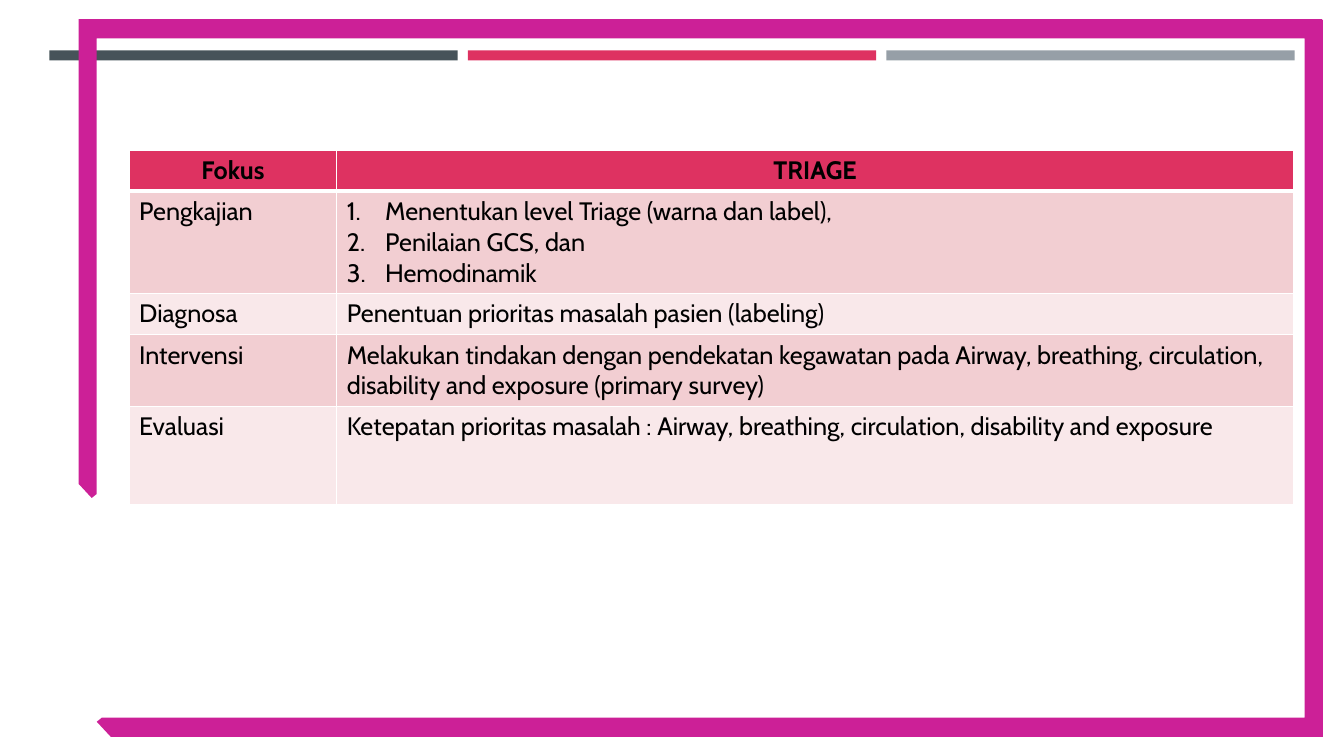
from lxml.etree import SubElement
from pptx import Presentation
from pptx.dml.color import RGBColor
from pptx.enum.shapes import MSO_SHAPE
from pptx.enum.text import PP_ALIGN
from pptx.oxml.ns import qn
from pptx.util import Inches, Pt


def color(value):
    return RGBColor.from_string(value)


class SlideBuilder:
    font_name = "Cabin"
    font_size = 18
    text_color = "000000"
    border_color = "FFFFFF"
    header_fill = "DE3261"
    band_fills = ("F2CED2", "F9E8EA")

    def __init__(self, presentation):
        self.slide = presentation.slides.add_slide(presentation.slide_layouts[6])

    def paint(self, shape, fill):
        shape.shadow.inherit = False
        shape.fill.solid()
        shape.fill.fore_color.rgb = color(fill)
        shape.line.fill.background()

    def bar(self, left, top, width, height, fill):
        shape = self.slide.shapes.add_shape(
            MSO_SHAPE.RECTANGLE, Inches(left), Inches(top), Inches(width), Inches(height))
        self.paint(shape, fill)

    def outline(self, points, fill):
        start, *others = [(Inches(x), Inches(y)) for x, y in points]
        builder = self.slide.shapes.build_freeform(*start)
        builder.add_line_segments(others, close=True)
        self.paint(builder.convert_to_shape(), fill)

    def borders(self, cell, bottom_width):
        properties = cell._tc.get_or_add_tcPr()
        for side, width in (("L", 1), ("R", 1), ("T", 1), ("B", bottom_width)):
            line = SubElement(properties, qn(f"a:ln{side}"), w=str(Pt(width)))
            fill = SubElement(line, qn("a:solidFill"))
            SubElement(fill, qn("a:srgbClr"), val=self.border_color)

    def number(self, paragraph):
        properties = paragraph._p.get_or_add_pPr()
        properties.set("marL", str(Inches(0.38)))
        properties.set("indent", str(-Inches(0.38)))
        SubElement(properties, qn("a:buFont"), typeface="+mj-lt")
        SubElement(properties, qn("a:buAutoNum"), type="arabicPeriod")

    def cell(self, cell, text, fill, header):
        self.borders(cell, 3 if header else 1)
        cell.fill.solid()
        cell.fill.fore_color.rgb = color(fill)
        cell.text_frame.text = text
        paragraphs = cell.text_frame.paragraphs
        for paragraph in paragraphs:
            paragraph.alignment = PP_ALIGN.CENTER if header else PP_ALIGN.LEFT
            if len(paragraphs) > 1:
                self.number(paragraph)
            for run in paragraph.runs:
                run.font.name = self.font_name
                run.font.size = Pt(self.font_size)
                run.font.bold = header
                run.font.color.rgb = color(self.text_color)

    def table(self, left, top, widths, heights, rows):
        table = self.slide.shapes.add_table(
            len(rows), len(widths), Inches(left), Inches(top),
            Inches(sum(widths)), Inches(sum(heights))).table
        for column, width in zip(table.columns, widths):
            column.width = Inches(width)
        for index, (row, height, texts) in enumerate(zip(table.rows, heights, rows)):
            row.height = Inches(height)
            header = index == 0
            fill = self.header_fill if header else self.band_fills[(index - 1) % 2]
            for cell, text in zip(row.cells, texts):
                self.cell(cell, text, fill, header)


BAR_FILLS = ("465359", "DE3261", "969FA7")
FRAME_POINTS = (
    (0.78, 0.19), (13.11, 0.19), (13.12, 0.2), (13.12, 7.31), (1.1, 7.31),
    (0.96, 7.16), (1.01, 7.12), (12.94, 7.12), (12.94, 0.38), (0.96, 0.38),
    (0.96, 4.9), (0.91, 4.94), (0.78, 4.8),
)
TRIAGE_ROWS = (
    ("Fokus", "TRIAGE"),
    ("Pengkajian",
     "Menentukan level Triage (warna dan label),\nPenilaian GCS, dan\nHemodinamik"),
    ("Diagnosa", "Penentuan prioritas masalah pasien (labeling)"),
    ("Intervensi",
     "Melakukan tindakan dengan pendekatan kegawatan pada Airway, breathing, "
     "circulation, disability and exposure (primary survey)"),
    ("Evaluasi",
     "Ketepatan prioritas masalah : Airway, breathing, circulation, "
     "disability and exposure"),
)


def main():
    presentation = Presentation()
    presentation.slide_width = Inches(13.33)
    presentation.slide_height = Inches(7.5)
    builder = SlideBuilder(presentation)
    for index, fill in enumerate(BAR_FILLS):
        builder.bar(0.49 + index * 4.15, 0.5, 4.05, 0.1, fill)
    builder.outline(FRAME_POINTS, "CC2097")
    builder.table(1.28, 1.49, (2.06, 9.49), (0.4, 1.01, 0.41, 0.71, 0.97), TRIAGE_ROWS)
    presentation.save("out.pptx")


if __name__ == "__main__":
    main()
